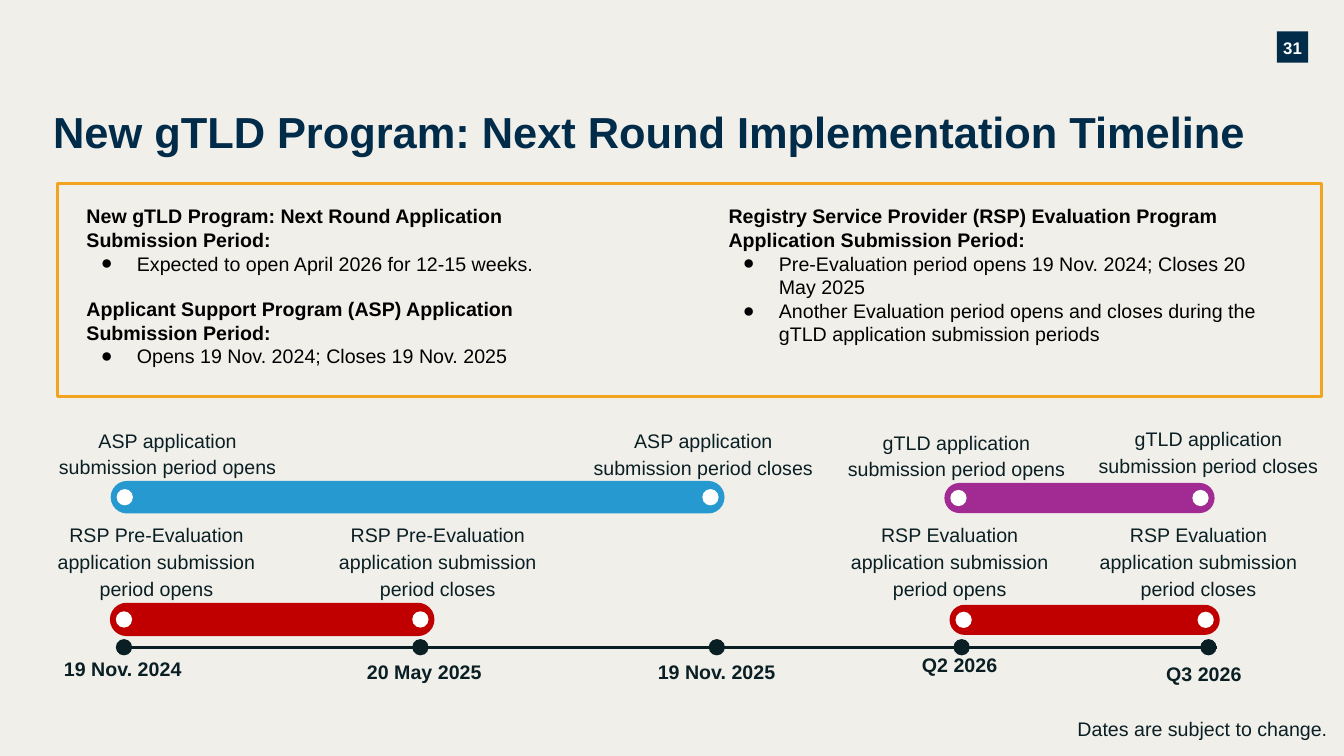
from lxml import etree
from pptx import Presentation
from pptx import util as u
from pptx.dml.color import RGBColor
from pptx.enum import shapes, text
from pptx.oxml import ns

CREAM = RGBColor(0xF1, 0xEF, 0xEA)
NAVY = RGBColor(0x00, 0x2B, 0x49)
INK = RGBColor(0x0A, 0x1F, 0x24)
BLACK = RGBColor(0, 0, 0)
WHITE = RGBColor(0xFF, 0xFF, 0xFF)
AMBER = RGBColor(0xF3, 0xA4, 0x1E)
BLUE = RGBColor(0x25, 0x99, 0xD0)
PURPLE = RGBColor(0xA1, 0x2B, 0x93)
RED = RGBColor(0xC0, 0x00, 0x00)

DOT = 0.41
DOT_INSET = 0.15
LEFT, CENTER = text.PP_ALIGN.LEFT, text.PP_ALIGN.CENTER

LEFT_POINTS = [
    ("New gTLD Program: Next Round Application Submission Period:",
     ["Expected to open April 2026 for 12-15 weeks."]),
    ("Applicant Support Program (ASP) Application Submission Period:",
     ["Opens 19 Nov. 2024; Closes 19 Nov. 2025"]),
]
RIGHT_POINTS = [
    ("Registry Service Provider (RSP) Evaluation Program Application Submission Period:",
     ["Pre-Evaluation period opens 19 Nov. 2024; Closes 20 May 2025",
      "Another Evaluation period opens and closes during the gTLD application submission periods"]),
]
PERIODS = [
    ("ASP application submission period", BLUE, (2.79, 12.12, 15.47, 0.82),
     (1.24, 10.72, 5.97, 1.35), (14.88, 10.74, 5.69, 1.35)),
    ("gTLD application submission period", PURPLE, (23.8, 12.17, 6.81, 0.76),
     (21.26, 10.77, 5.69, 1.35), (27.61, 10.69, 5.69, 1.35)),
    ("RSP Pre-Evaluation application submission period", RED, (2.77, 15.19, 8.18, 0.84),
     (1.24, 13.11, 5.41, 2.03), (7.95, 13.11, 6.17, 2.03)),
    ("RSP Evaluation application submission period", RED, (23.93, 15.24, 6.81, 0.76),
     (21.18, 13.11, 5.51, 2.03), (27.36, 13.11, 5.69, 2.03)),
]
DATES = [
    ("19 Nov. 2024", 2.92, (1.24, 16.43, 3.71, 0.76)),
    ("20 May 2025", 10.39, (8.84, 16.51, 3.71, 0.76)),
    ("19 Nov. 2025", 17.86, (16.13, 16.51, 3.86, 1.09)),
    ("Q2 2026", 24.03, (22.94, 16.33, 2.49, 1.09)),
    ("Q3 2026", 30.25, (28.22, 16.54, 4.24, 1.09)),
]


def cm(box):
    return [u.Cm(value) for value in box]


def set_all(obj, values):
    for name, value in values.items():
        setattr(obj, name, value)


def write(p, words, size=14, color=INK, bold=False, **layout):
    r = p.add_run()
    r.text = words
    set_all(r.font, dict(name="Arial", size=u.Pt(size), bold=bold))
    r.font.color.rgb = color
    set_all(p, layout)


def frame(sp, inset_x, inset_y, anchor=text.MSO_ANCHOR.TOP):
    tf = sp.text_frame
    set_all(tf, dict(word_wrap=True, auto_size=text.MSO_AUTO_SIZE.NONE, vertical_anchor=anchor,
                     margin_left=u.Cm(inset_x), margin_right=u.Cm(inset_x),
                     margin_top=u.Cm(inset_y), margin_bottom=u.Cm(inset_y)))
    return tf


def add_text(s, box, words, inset_x=0, inset_y=0, **style):
    tf = frame(s.shapes.add_textbox(*cm(box)), inset_x, inset_y)
    write(tf.paragraphs[0], words, alignment=CENTER, **style)


def add_solid(s, kind, box, color):
    sp = s.shapes.add_shape(kind, *cm(box))
    sp.shadow.inherit = False
    sp.fill.solid()
    sp.fill.fore_color.rgb = color
    sp.line.fill.background()
    return sp


def add_dot(s, left, middle, color):
    add_solid(s, shapes.MSO_SHAPE.OVAL, (left, middle - DOT / 2, DOT, DOT), color)


def add_bullet(p):
    pPr = p._p.get_or_add_pPr()
    pPr.set("marL", str(u.Cm(1.27)))
    pPr.set("indent", str(u.Cm(-0.91)))
    color = etree.SubElement(pPr, ns.qn("a:buClr"))
    etree.SubElement(color, ns.qn("a:srgbClr")).set("val", str(BLACK))
    etree.SubElement(pPr, ns.qn("a:buFont")).set("typeface", "Arial")
    etree.SubElement(pPr, ns.qn("a:buChar")).set("char", "●")


def add_header(s, box):
    title = s.shapes.title
    title.left, title.top, title.width, title.height = cm(box)
    tf = frame(title, 0.25, 0.23)
    write(tf.paragraphs[0], "New gTLD Program: Next Round Implementation Timeline",
          31, NAVY, True, alignment=LEFT)
    badge = add_solid(s, shapes.MSO_SHAPE.RECTANGLE, (32.18, 0.79, 0.79, 0.79), NAVY)
    tf = frame(badge, 0, 0, text.MSO_ANCHOR.MIDDLE)
    write(tf.paragraphs[0], "31", 12, WHITE, True, alignment=CENTER, line_spacing=1.08)


def add_points(s, box, sections):
    tf = frame(s.shapes.add_textbox(*cm(box)), 0.25, 0.25)
    for i, (heading, points) in enumerate(sections):
        p = tf.add_paragraph() if i else tf.paragraphs[0]
        write(p, heading, color=BLACK, bold=True, space_before=u.Pt(16 if i else 0))
        for point in points:
            p = tf.add_paragraph()
            add_bullet(p)
            write(p, point, color=BLACK)


def add_summary(s, box):
    left, top, width, height = box
    add_points(s, (left + 0.48, top + 0.28, 13.64, 6.43), LEFT_POINTS)
    add_points(s, (left + 16.66, top + 0.28, 14.35, 6.43), RIGHT_POINTS)
    sp = s.shapes.add_shape(shapes.MSO_SHAPE.RECTANGLE, *cm(box))
    sp.shadow.inherit = False
    sp.fill.background()
    sp.line.color.rgb = AMBER
    sp.line.width = u.Pt(2)


def add_period(s, name, color, bar, opens, closes):
    for box, event in ((opens, "opens"), (closes, "closes")):
        add_text(s, box, f"{name} {event}", line_spacing=1.13)
    add_solid(s, shapes.MSO_SHAPE.ROUNDED_RECTANGLE, bar, color).adjustments[0] = 0.5
    left, top, width, height = bar
    for x in (left + DOT_INSET, left + width - DOT_INSET - DOT):
        add_dot(s, x, top + height / 2, WHITE)


def add_axis(s, left, right, middle):
    line = s.shapes.add_connector(shapes.MSO_CONNECTOR.STRAIGHT,
                                  *cm((left, middle, right, middle)))
    line.line.color.rgb = INK
    line.line.width = u.Pt(2.25)
    etree.SubElement(line._element.spPr, ns.qn("a:effectLst"))
    for date, x, box in DATES:
        add_dot(s, x, middle, INK)
        add_text(s, box, date, 0.25, 0.13, bold=True)


def main():
    prs = Presentation()
    prs.slide_width, prs.slide_height = u.Cm(33.87), u.Cm(19.05)
    s = prs.slides.add_slide(prs.slide_layouts[5])
    s.background.fill.solid()
    s.background.fill.fore_color.rgb = CREAM
    add_header(s, (1.09, 2.41, 31.9, 1.24))
    add_summary(s, (1.45, 4.62, 31.85, 5.38))
    for period in PERIODS:
        add_period(s, *period)
    add_axis(s, 2.95, 30.66, 16.31)
    add_text(s, (26.75, 17.98, 7.11, 0.61), "Dates are subject to change.", line_spacing=1.13)
    prs.save("out.pptx")


if __name__ == "__main__":
    main()
